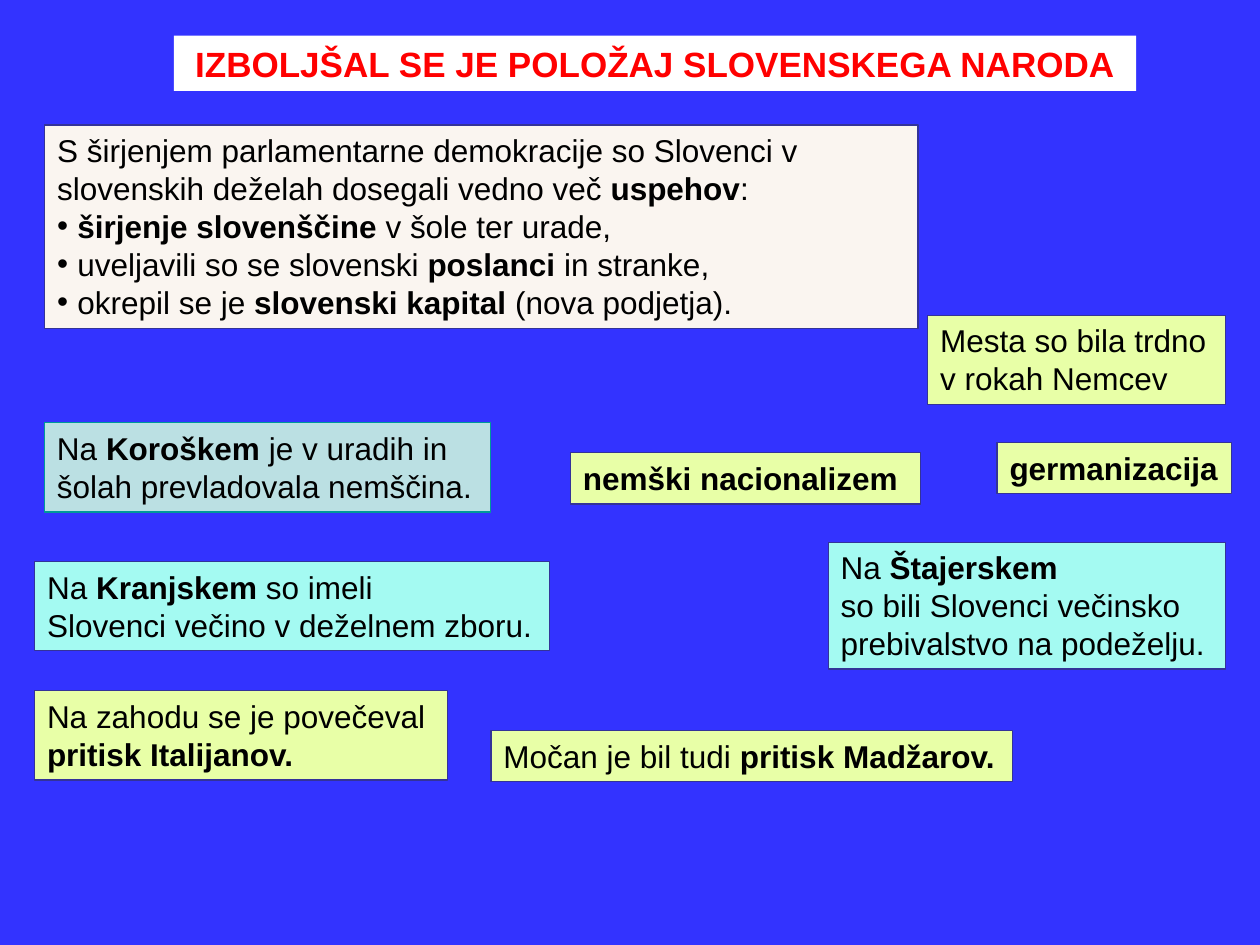
"""Build a slide on how the position of the Slovene nation improved."""
from lxml.etree import SubElement
from pptx import Presentation
from pptx.dml.color import RGBColor
from pptx.enum.text import MSO_ANCHOR, MSO_AUTO_SIZE, PP_ALIGN
from pptx.oxml.ns import qn
from pptx.util import Pt

BLUE = RGBColor(0x33, 0x33, 0xFF)
NAVY = RGBColor(0x33, 0x33, 0x99)
TEAL = RGBColor(0x00, 0x99, 0x99)
WHITE = RGBColor(0xFF, 0xFF, 0xFF)
CREAM = RGBColor(0xFA, 0xF5, 0xF0)
LIME = RGBColor(0xE8, 0xFF, 0xA7)
AQUA = RGBColor(0xA4, 0xFA, 0xF2)
MIST = RGBColor(0xBB, 0xE0, 0xE3)
RED = RGBColor(0xFF, 0x00, 0x00)
BLACK = RGBColor(0x00, 0x00, 0x00)


def write(para, text, font="Arial", size=18, color=BLACK, align=PP_ALIGN.LEFT, bullet=False):
    """Write text into a paragraph, with *stars* around its bold parts."""
    props = para._p.get_or_add_pPr()
    inset = Pt(11.5) if bullet else 0
    props.set("marL", str(inset))
    props.set("indent", str(-inset))
    if bullet:
        SubElement(props, qn("a:buChar"), char="•")
    else:
        SubElement(props, qn("a:buNone"))
    para.alignment = align
    para.space_before = Pt(0)
    for i, part in enumerate(text.split("*")):
        if part:
            run = para.add_run()
            run.text = part
            run.font.name = font
            run.font.size = Pt(size)
            run.font.color.rgb = color
            run.font.bold = i % 2 == 1


class Board:
    """Hold the style and the current slide."""

    def __init__(self, deck):
        """Add a slide with a plain background."""
        self.slide = deck.slides.add_slide(deck.slide_layouts[1])
        self.slide.background.fill.solid()
        self.slide.background.fill.fore_color.rgb = BLUE

    def dress(self, shape, area, fill, line=None, wrap=True, anchor=MSO_ANCHOR.TOP):
        """Place and paint a shape, and return its text frame."""
        shape.left, shape.top, shape.width, shape.height = map(Pt, area)
        shape.fill.solid()
        shape.fill.fore_color.rgb = fill
        if line is not None:
            shape.line.color.rgb = line
            shape.line.width = Pt(0.75)
        frame = shape.text_frame
        frame.auto_size = MSO_AUTO_SIZE.NONE
        frame.word_wrap = wrap
        frame.vertical_anchor = anchor
        return frame

    def title(self, text, area):
        """Fill the title placeholder."""
        frame = self.dress(self.slide.shapes.title, area, WHITE, anchor=MSO_ANCHOR.MIDDLE)
        write(frame.paragraphs[0], text, size=20, color=RED, align=PP_ALIGN.CENTER)

    def list(self, intro, items, area):
        """Fill the body placeholder with an intro and bullets."""
        frame = self.dress(self.slide.placeholders[1], area, CREAM, NAVY)
        write(frame.paragraphs[0], intro)
        for item in items:
            write(frame.add_paragraph(), item, bullet=True)

    def note(self, lines, area, fill, line=NAVY, wrap=True):
        """Add a framed note with one paragraph per line."""
        box = self.slide.shapes.add_textbox(*map(Pt, area))
        frame = self.dress(box, area, fill, line, wrap)
        for i, text in enumerate(lines):
            write(frame.add_paragraph() if i else frame.paragraphs[0], text)


def main():
    """Build and save the slide."""
    deck = Presentation()
    deck.slide_width, deck.slide_height = Pt(720), Pt(540)
    board = Board(deck)
    board.title("*IZBOLJŠAL SE JE POLOŽAJ SLOVENSKEGA NARODA*", (99.3, 20.4, 550, 31.5))
    board.list(
        "S širjenjem parlamentarne demokracije so Slovenci v slovenskih deželah "
        "dosegali vedno več *uspehov*:",
        ["*širjenje slovenščine* v šole ter urade,",
         "uveljavili so se slovenski *poslanci* in stranke,",
         "okrepil se je *slovenski kapital* (nova podjetja)."],
        (25.5, 71.5, 499, 116.3))
    board.note(["*nemški nacionalizem*"], (326, 258.7, 200, 29.3), LIME)
    board.note(["*germanizacija*"], (569.8, 252.9, 134, 29.3), LIME, wrap=False)
    board.note(["Na *Kranjskem* so imeli", "Slovenci večino v deželnem zboru."],
               (19.8, 320.9, 294.2, 50.9), AQUA)
    board.note(["Na *Koroškem* je v uradih in", "šolah prevladovala nemščina."],
               (25.5, 241.5, 255, 51.2), MIST, line=TEAL)
    board.note(["Mesta so bila trdno", "v rokah Nemcev"], (530.2, 180.2, 170, 50.9), LIME)
    board.note(["Na *Štajerskem*", "so bili Slovenci večinsko prebivalstvo na podeželju."],
               (473.3, 309.9, 227, 72.5), AQUA)
    board.note(["Na zahodu se je povečeval", "*pritisk Italijanov.*"],
               (19.8, 394.6, 236, 51.2), LIME)
    board.note(["Močan je bil tudi *pritisk Madžarov.*"], (280.6, 417.4, 298, 29), LIME)
    deck.save("out.pptx")


if __name__ == "__main__":
    main()
